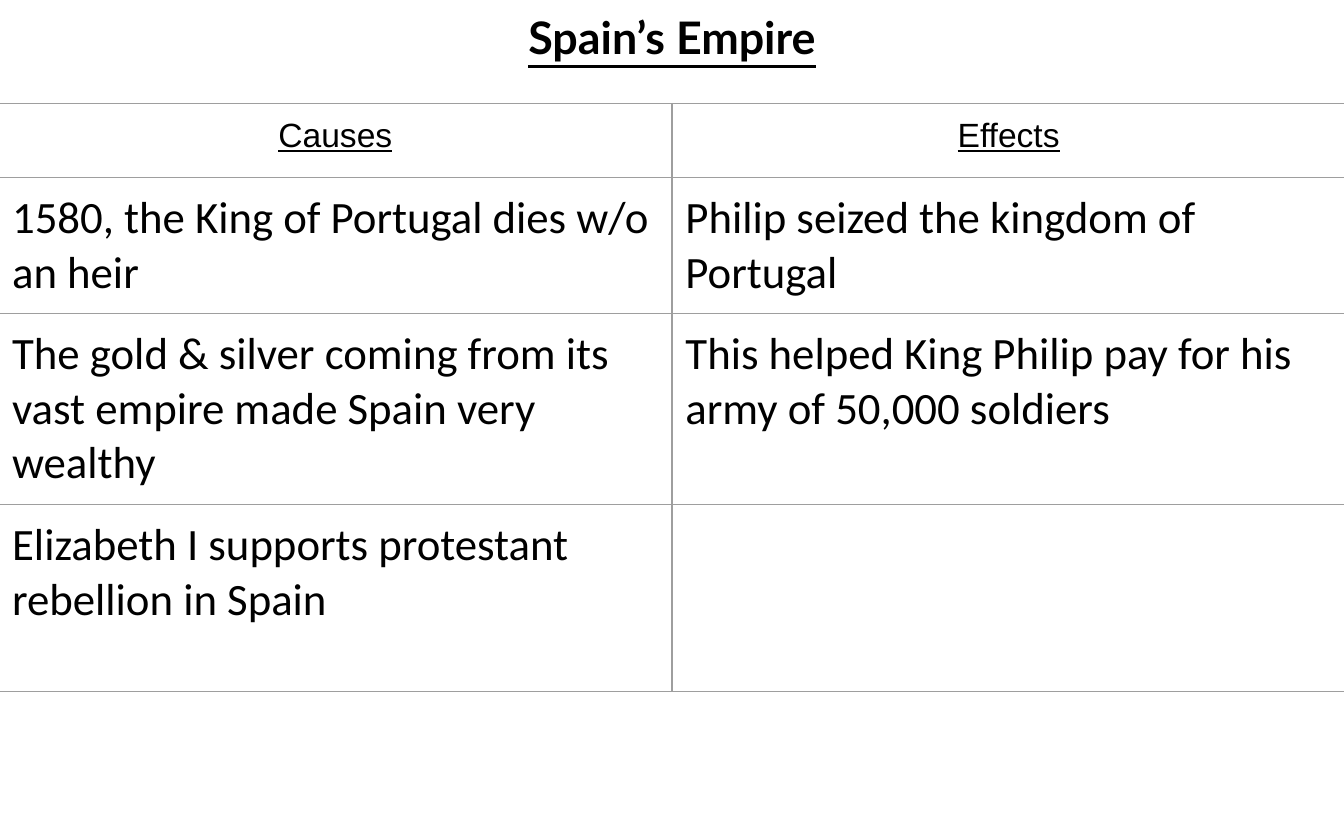
from dataclasses import dataclass

from lxml import etree
from pptx import Presentation
from pptx.dml.color import RGBColor
from pptx.enum.text import MSO_ANCHOR, MSO_AUTO_SIZE, PP_ALIGN
from pptx.oxml.ns import qn
from pptx.util import Inches, Pt

CENTER, LEFT = PP_ALIGN.CENTER, PP_ALIGN.LEFT
MIDDLE, TOP = MSO_ANCHOR.MIDDLE, MSO_ANCHOR.TOP
NO_FIT = MSO_AUTO_SIZE.NONE


@dataclass(frozen=True)
class Theme:
    text: str = "000000"
    border: str = "9E9E9E"
    border_width: float = 0.75
    title_size: int = 24
    header_size: int = 18
    body_size: int = 24
    title_font: str = "Lato"
    header_font: str = "Arial"
    body_font: str = "Calibri"


theme = Theme()


def write(tf, text, size, font, align=LEFT, bold=False, underline=False, before=0):
    tf.word_wrap = True
    p = tf.paragraphs[0]
    p.alignment = align
    p.space_before = Pt(before)
    r = p.add_run()
    r.text = text
    r.font.size = Pt(size)
    r.font.name = font
    r.font.bold = bold
    r.font.underline = underline
    r.font.color.rgb = RGBColor.from_string(theme.text)


def add_borders(cell):
    tcPr = cell._tc.get_or_add_tcPr()
    for i, side in enumerate(("lnL", "lnR", "lnT", "lnB")):
        ln = etree.Element(qn(f"a:{side}"), w=str(Pt(theme.border_width)))
        fill = etree.SubElement(ln, qn("a:solidFill"))
        etree.SubElement(fill, qn("a:srgbClr"), val=theme.border)
        tcPr.insert(i, ln)


prs = Presentation()
prs.slide_width, prs.slide_height = Inches(10), Inches(6.25)
s = prs.slides.add_slide(prs.slide_layouts[5])

# Title
title = s.shapes.title
title.left, title.top = Inches(0), Inches(0)
title.width, title.height = Inches(10), Inches(0.55)
tf = title.text_frame
tf.auto_size = NO_FIT
tf.vertical_anchor = MIDDLE
tf.margin_left = tf.margin_right = tf.margin_top = tf.margin_bottom = Inches(0.1)
write(tf, "Spain’s Empire", theme.title_size, theme.title_font,
      align=CENTER, bold=True, underline=True)

# Causes and effects table
rows = [
    ("Causes", "Effects"),
    ("1580, the King of Portugal dies w/o an heir",
     "Philip seized the kingdom of Portugal"),
    ("The gold & silver coming from its vast empire made Spain very wealthy",
     "This helped King Philip pay for his army of 50,000 soldiers"),
    ("Elizabeth I supports protestant rebellion in Spain", ""),
]
row_heights = [0.55, 0.92, 1.39, 1.39]
space_before = [0, 6, 6, 0]
col_width = 5.01

table = s.shapes.add_table(
    len(rows), 2, Inches(-0.01), Inches(0.77),
    Inches(2 * col_width), Inches(sum(row_heights))).table
table.first_row = table.horz_banding = False
for col in table.columns:
    col.width = Inches(col_width)

for i, texts in enumerate(rows):
    table.rows[i].height = Inches(row_heights[i])
    for j, text in enumerate(texts):
        cell = table.cell(i, j)
        cell.fill.background()
        cell.vertical_anchor = TOP
        cell.margin_left = cell.margin_right = Inches(0.1)
        cell.margin_top = cell.margin_bottom = Inches(0.1)
        add_borders(cell)
        if i == 0:
            write(cell.text_frame, text, theme.header_size, theme.header_font,
                  align=CENTER, underline=True)
        elif text:
            write(cell.text_frame, text, theme.body_size, theme.body_font,
                  before=space_before[i])

prs.save("out.pptx")
